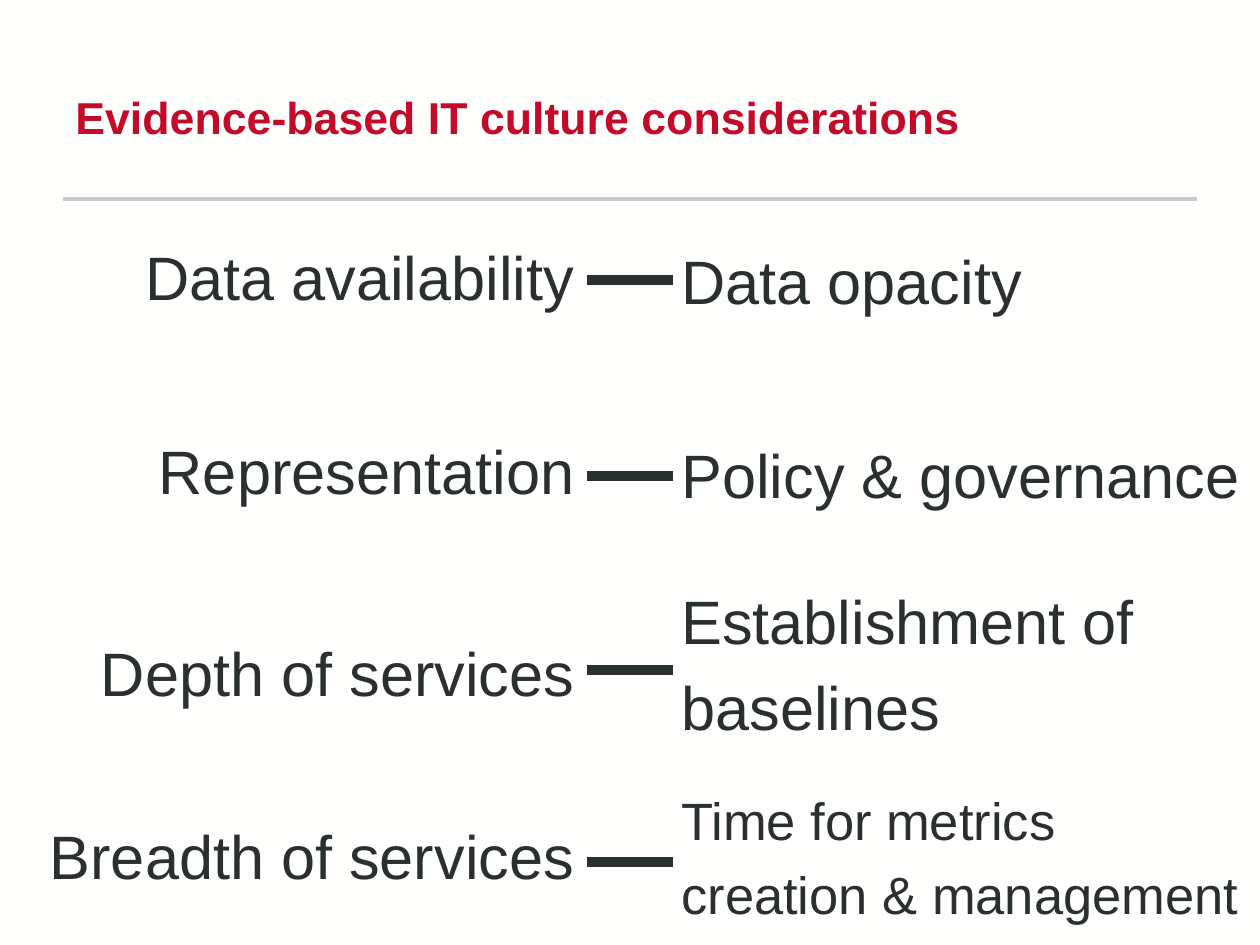
from lxml import etree
from pptx import Presentation
from pptx import util as u
from pptx.dml.color import RGBColor
from pptx.enum import shapes, text
from pptx.oxml.ns import qn

PX = u.Inches(1) / 126
RED = RGBColor(0xC3, 0x0A, 0x29)
GREY = RGBColor(0xC7, 0xCC, 0xCC)
INK = RGBColor(0x2A, 0x2F, 0x30)
PAPER = RGBColor(0xFF, 0xFF, 0xFE)


def px(*lengths):
    return [round(length * PX) for length in lengths]


def add_label(box, words, size, color=INK, bold=False,
              align=text.PP_ALIGN.LEFT, anchor=text.MSO_ANCHOR.TOP, spacing=None):
    """Add one paragraph per line of words; later ones get 20% space before."""
    frame = slide.shapes.add_textbox(*px(*box)).text_frame
    frame.word_wrap = True
    frame.vertical_anchor = anchor
    frame.text = words
    for i, paragraph in enumerate(frame.paragraphs):
        paragraph.alignment = align
        paragraph.line_spacing = spacing
        if i:
            paragraph.space_before = u.Pt(size * 0.2)
        font = paragraph.runs[0].font
        font.name, font.size, font.bold = "Arial", u.Pt(size), bold
        font.color.rgb = color


prs = Presentation()
prs.slide_width, prs.slide_height = px(1260, 945)
slide = prs.slides.add_slide(prs.slide_layouts[6])
slide.background.fill.solid()
slide.background.fill.fore_color.rgb = PAPER

add_label((63, 38, 1134, 157), "Evidence-based IT culture considerations", 25.5,
          color=RED, bold=True, anchor=text.MSO_ANCHOR.MIDDLE)

# enabler, its top, line spacing; link y; challenge, its top, width, height, size
pairs = [
    ("Data availability", 233, None, 280, "Data opacity", 237, 386, 87, 35),
    ("Representation", 435, 0.9, 476, "Policy & governance", 431, 626, 91, 35),
    ("Depth of services", 629, None, 670, "Establishment of\nbaselines", 577, 795, 185, 35),
    ("Breadth of services", 820, 0.9, 862, "Time for metrics\ncreation & management",
     782, 630, 158, 30),
]
rules = [(63, 1197, 199, GREY, 2)]
for enabler, top, spacing, link_y, challenge, right_top, width, height, size in pairs:
    add_label((-39, top, 626, 83), enabler, 35, align=text.PP_ALIGN.RIGHT, spacing=spacing)
    add_label((669, right_top, width, height), challenge, size)
    rules.append((587, 673, link_y, INK, 6))

for left, right, y, color, weight in rules:
    rule = slide.shapes.add_connector(shapes.MSO_CONNECTOR.STRAIGHT, *px(left, y, right, y))
    rule.line.color.rgb = color
    rule.line.width = u.Pt(weight)
    etree.SubElement(rule._element.spPr, qn("a:effectLst"))

prs.save("out.pptx")
